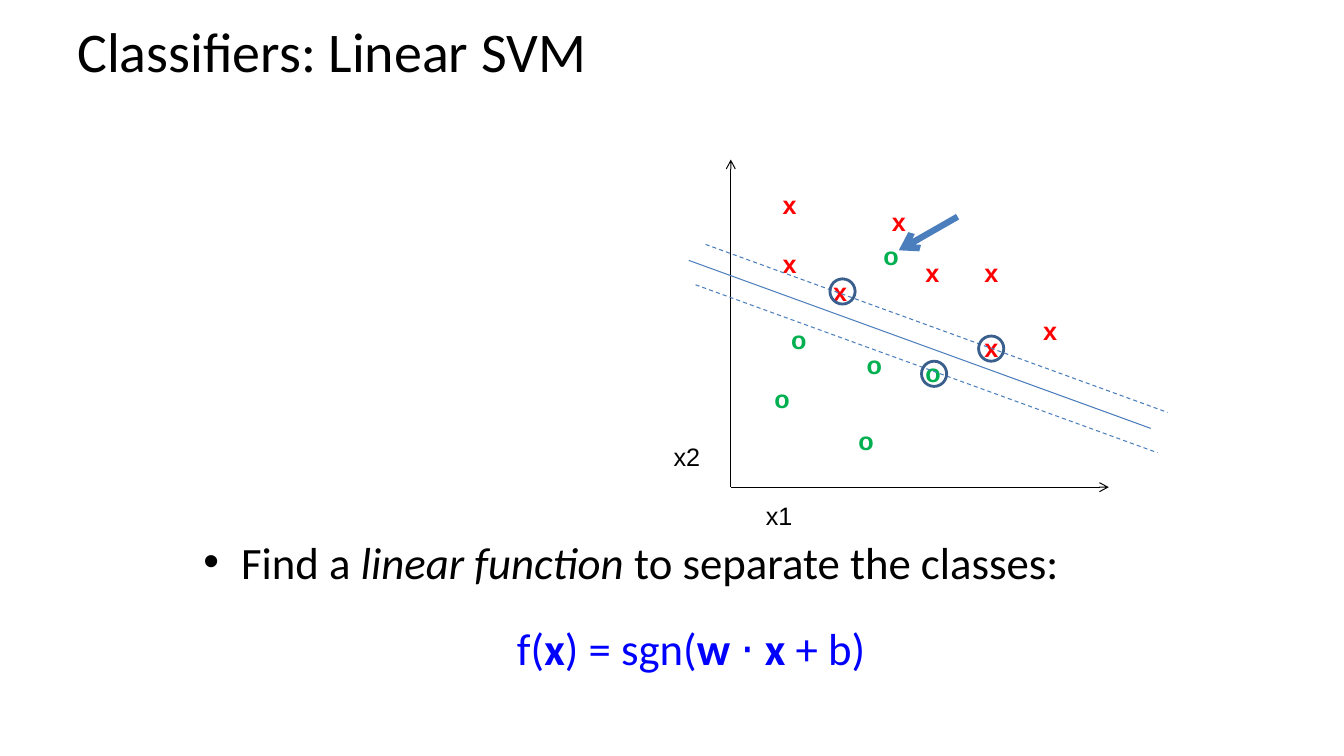
from dataclasses import dataclass

from lxml import etree
from pptx import Presentation
from pptx.dml.color import RGBColor
from pptx.enum.dml import MSO_LINE
from pptx.enum.shapes import MSO_CONNECTOR, MSO_SHAPE
from pptx.enum.text import MSO_ANCHOR, MSO_AUTO_SIZE, PP_ALIGN
from pptx.oxml.ns import qn
from pptx.util import Inches, Pt

STRAIGHT = MSO_CONNECTOR.STRAIGHT
ELLIPSE = MSO_SHAPE.OVAL
DASH = MSO_LINE.DASH
LEFT, CENTER = PP_ALIGN.LEFT, PP_ALIGN.CENTER
MIDDLE, TOP = MSO_ANCHOR.MIDDLE, MSO_ANCHOR.TOP
NO_FIT = MSO_AUTO_SIZE.NONE


@dataclass(frozen=True)
class Theme:
    black: str = "000000"
    positive: str = "FF0000"
    negative: str = "00B050"
    formula: str = "0000FF"
    line: str = "4B7EBC"
    ring: str = "3A5F8C"
    heading_font: str = "Calibri"
    plot_font: str = "Arial"
    title_size: int = 40
    body_size: int = 32
    plot_size: int = 18
    thin: float = 0.75
    medium: float = 2
    thick: float = 4.5


THEME = Theme()
COLUMNS, ROWS = 160, 90
CELL = Inches(1 / 12)

TITLE = "Classifiers: Linear SVM"
TITLE_AREA = (8, 0, 144, 12)
BODY_AREA = (23, 63, 114, 17.4)
TASK = [
    ("Find a ", {}),
    ("linear function ", {"italic": True}),
    ("to separate the classes:", {}),
]
FORMULA = [
    ("f(", {}),
    ("x", {"bold": True}),
    (") = sgn(", {}),
    ("w ", {"bold": True}),
    ("⋅ ", {}),
    ("x ", {"bold": True}),
    ("+ b)", {}),
]

MARKERS = [
    ("x", THEME.positive, True, 4.1, [
        (109, 30), (116, 30), (116, 39), (123, 37),
        (92, 22), (92, 29), (105, 24), (98, 32.3),
    ]),
    ("o", THEME.negative, True, 4.3, [
        (104, 28), (109, 42), (91, 45), (93, 38), (101, 50), (102, 41),
    ]),
    ("x2", THEME.black, False, 5.6, [(79, 52)]),
    ("x1", THEME.black, False, 5.6, [(90, 59)]),
]
MARKER_HEIGHT = 4.8

ORIGIN = (87, 58)
AXIS_TIPS = [(87, 19), (132, 58)]
BOUNDARY_SPAN = (55, 20)
BOUNDARIES = [((82, 31), None), ((84, 29.1), DASH), ((82.8, 33.9), DASH)]
SUPPORT_VECTORS = [(98.8, 33.2), (116.5, 40), (109.7, 43)]
RING = 3
POINTER = ((114, 25.8), (107, 29.8))


def cells(*counts):
    return [round(count * CELL) for count in counts]


def apply(target, values):
    for name, value in values.items():
        setattr(target, name, value)


def place(box, area):
    apply(box, dict(zip(("left", "top", "width", "height"), cells(*area))))


def write(para, spans, size, font, color):
    for text, style in spans:
        span = para.add_run()
        span.text = text
        apply(span.font, {"size": Pt(size), "name": font, **style})
        span.font.color.rgb = RGBColor.from_string(color)


def draw_line(page, start, end, color, width, dash=None, arrow=False):
    line = page.shapes.add_connector(STRAIGHT, *cells(*start, *end))
    line.line.color.rgb = RGBColor.from_string(color)
    line.line.width = Pt(width)
    if dash:
        line.line.dash_style = dash
    if arrow:
        outline = line.line._get_or_add_ln()
        etree.SubElement(outline, qn("a:tailEnd"), type="arrow")
    etree.SubElement(line._element.spPr, qn("a:effectLst"))


def draw_marker(page, text, color, bold, width, spot):
    box = page.shapes.add_textbox(*cells(*spot, width, MARKER_HEIGHT))
    box.text_frame.word_wrap = False
    write(box.text_frame.paragraphs[0], [(text, {"bold": bold})],
          THEME.plot_size, THEME.plot_font, color)


def draw_ring(page, spot):
    ring = page.shapes.add_shape(ELLIPSE, *cells(*spot, RING, RING))
    ring.shadow.inherit = False
    ring.fill.background()
    ring.line.color.rgb = RGBColor.from_string(THEME.ring)
    ring.line.width = Pt(THEME.medium)


def fill_title(page):
    title = page.shapes.title
    place(title, TITLE_AREA)
    apply(title.text_frame, {"vertical_anchor": MIDDLE, "auto_size": NO_FIT})
    para = title.text_frame.paragraphs[0]
    para.alignment = LEFT
    write(para, [(TITLE, {})], THEME.title_size, THEME.heading_font, THEME.black)


def fill_body(page):
    body = page.placeholders[1]
    place(body, BODY_AREA)
    frame = body.text_frame
    apply(frame, {"vertical_anchor": TOP, "auto_size": NO_FIT})
    task, formula = frame.paragraphs[0], frame.add_paragraph()
    apply(task, {"alignment": LEFT, "space_before": Pt(6.4)})
    apply(formula, {"alignment": CENTER, "space_before": Pt(23.4)})
    settings = formula._p.get_or_add_pPr()
    settings.set("marL", str(Inches(0.38)))
    settings.set("indent", "0")
    etree.SubElement(settings, qn("a:buNone"))
    write(task, TASK, THEME.body_size, THEME.heading_font, THEME.black)
    write(formula, FORMULA, THEME.body_size, THEME.heading_font, THEME.formula)


def draw_plot(page):
    for text, color, bold, width, spots in MARKERS:
        for spot in spots:
            draw_marker(page, text, color, bold, width, spot)
    for tip in AXIS_TIPS:
        draw_line(page, ORIGIN, tip, THEME.black, THEME.thin, arrow=True)
    for start, dash in BOUNDARIES:
        end = [a + b for a, b in zip(start, BOUNDARY_SPAN)]
        draw_line(page, start, end, THEME.line, THEME.thin, dash)
    for spot in SUPPORT_VECTORS:
        draw_ring(page, spot)
    draw_line(page, *POINTER, THEME.line, THEME.thick, arrow=True)


def main():
    deck = Presentation()
    deck.slide_width, deck.slide_height = cells(COLUMNS, ROWS)
    page = deck.slides.add_slide(deck.slide_layouts[1])
    fill_title(page)
    draw_plot(page)
    fill_body(page)
    deck.save("out.pptx")


if __name__ == "__main__":
    main()
